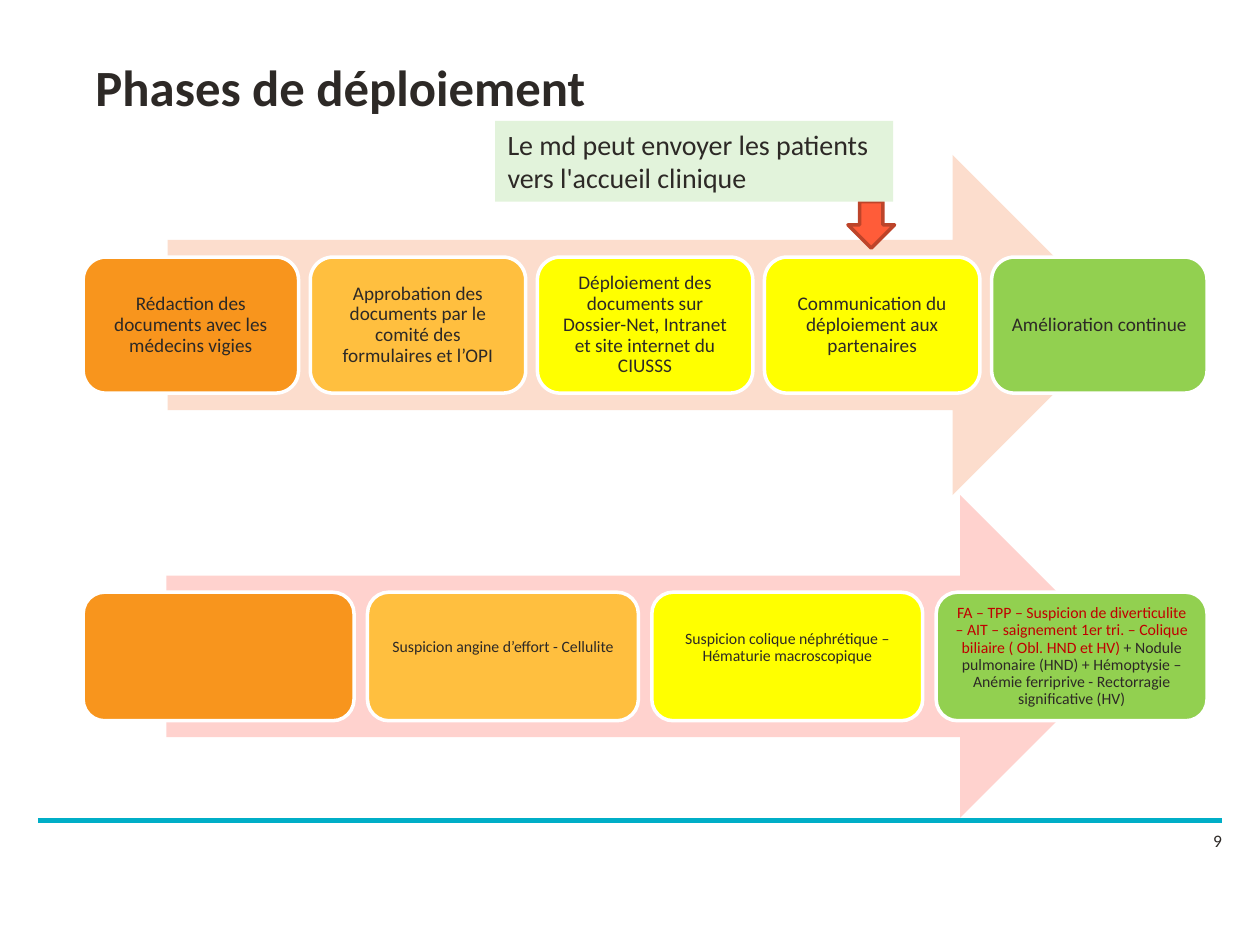
from dataclasses import dataclass

from lxml.etree import SubElement
from pptx import Presentation
from pptx.dml.color import RGBColor
from pptx.enum.shapes import MSO_CONNECTOR, MSO_SHAPE
from pptx.enum.text import MSO_ANCHOR, PP_ALIGN
from pptx.oxml.ns import qn
from pptx.util import Inches, Pt

INK = RGBColor(0x2D, 0x29, 0x26)
WHITE = RGBColor(0xFF, 0xFF, 0xFF)
ORANGE = RGBColor(0xF8, 0x95, 0x1D)
AMBER = RGBColor(0xFF, 0xBF, 0x3F)
YELLOW = RGBColor(0xFF, 0xFF, 0x00)
GREEN = RGBColor(0x92, 0xD0, 0x50)
PEACH = RGBColor(0xFC, 0xDD, 0xCD)
PINK = RGBColor(0xFF, 0xD2, 0xCE)
MINT = RGBColor(0xE2, 0xF3, 0xDB)
CORAL = RGBColor(0xFF, 0x5C, 0x39)
BRICK = RGBColor(0xBD, 0x44, 0x2A)
RED = RGBColor(0xC0, 0x00, 0x00)
TEAL = RGBColor(0x00, 0xAE, 0xC7)

ROW_LEFT, ROW_WIDTH = 0.66, 8.92


@dataclass
class Run:
    text: str
    color: RGBColor = INK


@dataclass
class Card:
    fill: RGBColor
    runs: tuple[Run, ...] = ()
    extra_bottom: float = 0


@dataclass
class Phase:
    arrow: tuple[float, float, float, float]
    arrow_fill: RGBColor
    top: float
    width: float
    height: float
    size: int
    inset: float
    cards: list[Card]


PHASES = [
    Phase((1.33, 1.23, 7.58, 2.7), PEACH, 2.04, 1.71, 1.08, 11, 0.1, [
        Card(ORANGE, (Run("Rédaction des documents avec les médecins vigies"),)),
        Card(AMBER, (Run("Approbation des documents par le comité des formulaires et l’OPI"),)),
        Card(YELLOW, (Run("Déploiement des documents sur Dossier-Net, Intranet et site "
                          "internet du CIUSSS"),)),
        Card(YELLOW, (Run("Communication du déploiement aux partenaires"),)),
        Card(GREEN, (Run("Amélioration continue"),)),
    ]),
    Phase((1.32, 3.93, 7.58, 2.56), PINK, 4.7, 2.15, 1.02, 9, 0.09, [
        Card(ORANGE),
        Card(AMBER, (Run("Suspicion angine d’effort - Cellulite"),), 0.14),
        Card(YELLOW, (Run("Suspicion colique néphrétique – Hématurie macroscopique"),), 0.14),
        Card(GREEN, (
            Run("FA – TPP – Suspicion de diverticulite – AIT – saignement 1er tri. – "
                "Colique biliaire ( Obl. HND et HV)", RED),
            Run(" + Nodule pulmonaire (HND) + Hémoptysie – Anémie ferriprive - "
                "Rectorragie significative (HV)"),
        )),
    ]),
]


def set_all(target, values: dict) -> None:
    """Set every named attribute on the target."""
    for name, value in values.items():
        setattr(target, name, value)


def write(s, runs: tuple[Run, ...], size: float, frame: dict, para: dict, bold: bool = False) -> None:
    """Write one paragraph of runs into a shape."""
    tf = s.text_frame
    set_all(tf, {"word_wrap": True, **frame})
    p = tf.paragraphs[0]
    set_all(p, para)
    for run in runs:
        r = p.add_run()
        r.text = run.text
        set_all(r.font, {"name": "Calibri", "size": Pt(size), "bold": bold})
        r.font.color.rgb = run.color


def add_box(slide, kind: MSO_SHAPE, at: tuple, fill: RGBColor, line: RGBColor | None = None):
    """Add a filled preset shape with an optional outline."""
    s = slide.shapes.add_shape(kind, *map(Inches, at))
    s.shadow.inherit = False
    s.fill.solid()
    s.fill.fore_color.rgb = fill
    if line is None:
        s.line.fill.background()
    else:
        s.line.color.rgb = line
        s.line.width = Pt(2)
    return s


def add_label(slide, at: tuple, text: str, size: float, anchor: MSO_ANCHOR, bold: bool = False) -> None:
    """Add a left-aligned text box."""
    s = slide.shapes.add_textbox(*map(Inches, at))
    write(s, (Run(text),), size, {"vertical_anchor": anchor}, {"alignment": PP_ALIGN.LEFT}, bold)


def add_phase(slide, phase: Phase) -> None:
    """Draw a wide arrow with its evenly spaced cards."""
    add_box(slide, MSO_SHAPE.RIGHT_ARROW, phase.arrow, phase.arrow_fill)
    pitch = (ROW_WIDTH - phase.width) / (len(phase.cards) - 1)
    inset = Inches(phase.inset)
    for i, card in enumerate(phase.cards):
        at = (ROW_LEFT + i * pitch, phase.top, phase.width, phase.height)
        s = add_box(slide, MSO_SHAPE.ROUNDED_RECTANGLE, at, card.fill, WHITE)
        if card.runs:
            frame = {"vertical_anchor": MSO_ANCHOR.MIDDLE, "margin_left": inset,
                     "margin_right": inset, "margin_top": inset,
                     "margin_bottom": inset + Inches(card.extra_bottom)}
            write(s, card.runs, phase.size, frame,
                  {"alignment": PP_ALIGN.CENTER, "line_spacing": 0.9})


def add_rule(slide) -> None:
    """Draw the footer line."""
    s = slide.shapes.add_connector(MSO_CONNECTOR.STRAIGHT, Inches(0.3), Inches(6.51),
                                   Inches(9.7), Inches(6.51))
    s.line.color.rgb = TEAL
    s.line.width = Pt(3)
    SubElement(s.element.spPr, qn("a:effectLst"))


def main() -> None:
    """Build and save the slide."""
    prs = Presentation()
    set_all(prs, {"slide_width": Inches(10), "slide_height": Inches(7.5)})
    slide = prs.slides.add_slide(prs.slide_layouts[6])
    add_label(slide, (9.53, 6.54, 0.47, 0.4), "9", 10, MSO_ANCHOR.TOP)
    add_rule(slide)
    add_label(slide, (0.66, 0.3, 8.04, 0.77), "Phases de déploiement", 29, MSO_ANCHOR.MIDDLE, True)
    first, second = PHASES
    add_phase(slide, first)
    add_box(slide, MSO_SHAPE.DOWN_ARROW, (6.73, 1.6, 0.37, 0.37), CORAL, BRICK)
    callout = add_box(slide, MSO_SHAPE.RECTANGLE, (3.93, 0.96, 3.16, 0.64), MINT)
    write(callout, (Run("Le md peut envoyer les patients vers l'accueil clinique"),), 16,
          {"vertical_anchor": MSO_ANCHOR.TOP}, {"alignment": PP_ALIGN.LEFT})
    add_phase(slide, second)
    prs.save("out.pptx")


if __name__ == "__main__":
    main()
